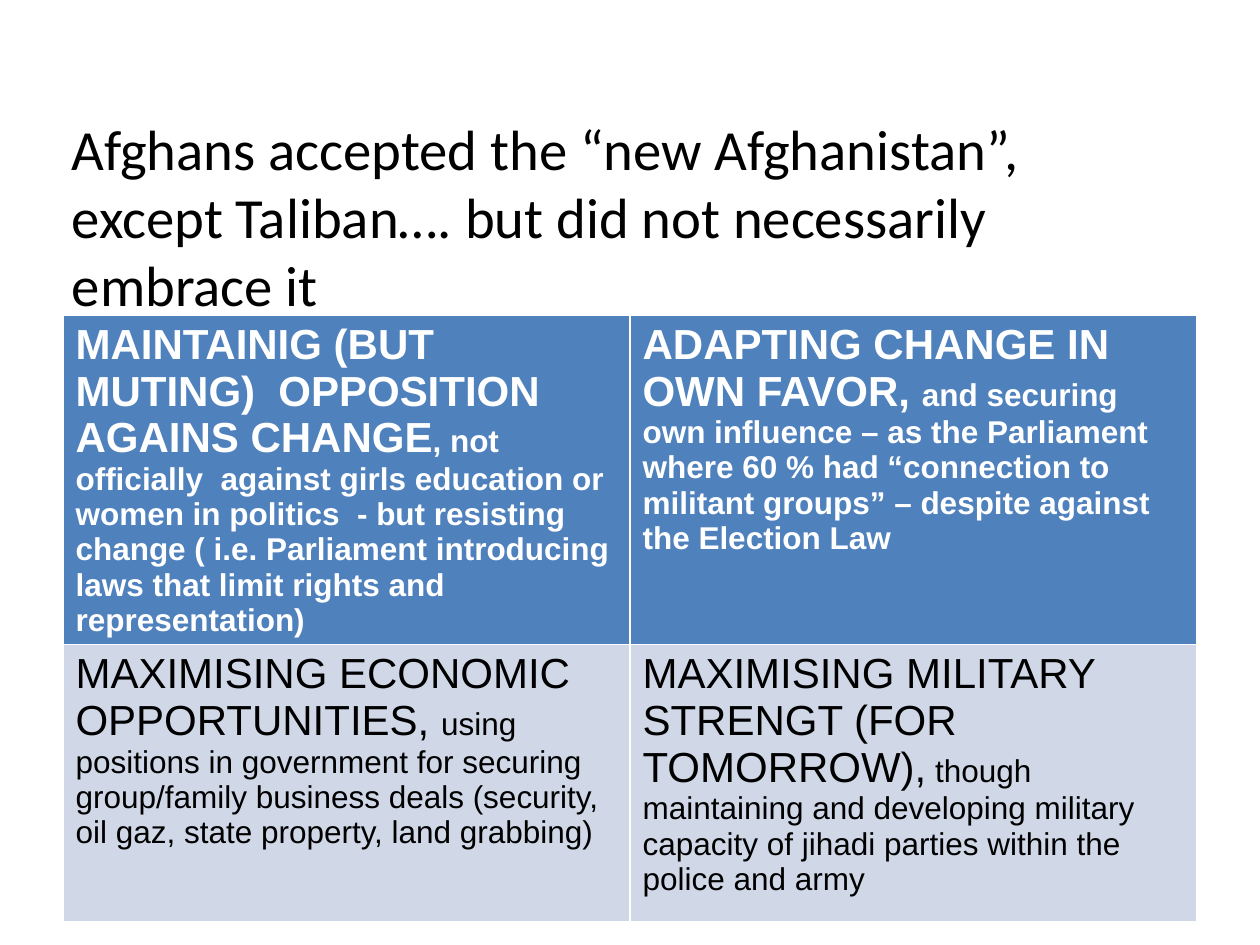
from typing import NamedTuple

from pptx import Presentation
from pptx.dml.color import RGBColor
from pptx.enum.text import MSO_ANCHOR, MSO_AUTO_SIZE, PP_ALIGN
from pptx.util import Inches, Pt

LEFT = PP_ALIGN.LEFT
MIDDLE = MSO_ANCHOR.MIDDLE
NO_FIT = MSO_AUTO_SIZE.NONE
BLACK = RGBColor(0x00, 0x00, 0x00)
WHITE = RGBColor(0xFF, 0xFF, 0xFF)
BLUE = RGBColor(0x4F, 0x81, 0xBD)
PALE_BLUE = RGBColor(0xD0, 0xD8, 0xE8)


class Strategy(NamedTuple):
    heading: str
    detail: str


class RowStyle(NamedTuple):
    fill: RGBColor
    color: RGBColor
    bold: bool


TITLE = "Afghans accepted the “new Afghanistan”, except Taliban…. but did not necessarily embrace it"
STRATEGIES = [
    [
        Strategy(
            "MAINTAINIG (BUT MUTING)  OPPOSITION AGAINS CHANGE",
            ", not officially  against girls education or women in politics  - but resisting "
            "change ( i.e. Parliament introducing laws that limit rights and representation)",
        ),
        Strategy(
            "ADAPTING CHANGE IN OWN FAVOR, ",
            "and securing own influence – as the Parliament where 60 % had “connection to "
            "militant groups” – despite against the Election Law",
        ),
    ],
    [
        Strategy(
            "MAXIMISING ECONOMIC OPPORTUNITIES, ",
            "using positions in government for securing group/family business deals "
            "(security, oil gaz, state property, land grabbing)",
        ),
        Strategy(
            "MAXIMISING MILITARY STRENGT (FOR TOMORROW),",
            " though maintaining and developing military capacity of jihadi parties within "
            "the police and army",
        ),
    ],
]
ROW_STYLES = [RowStyle(BLUE, WHITE, True), RowStyle(PALE_BLUE, BLACK, False)]


def add_run(p, text: str, *, size: float, font: str = "Arial",
            color: RGBColor = BLACK, bold: bool = False) -> None:
    r = p.add_run()
    r.text = text
    r.font.name = font
    r.font.size = Pt(size)
    r.font.bold = bold
    r.font.color.rgb = color


def set_title(slide, text: str) -> None:
    sp = slide.shapes.title
    sp.left, sp.top, sp.width, sp.height = map(Inches, (0.47, 1.09, 9, 1.25))
    tf = sp.text_frame
    tf.word_wrap = True
    tf.auto_size = NO_FIT
    tf.vertical_anchor = MIDDLE
    p = tf.paragraphs[0]
    p.alignment = LEFT
    add_run(p, text, size=32.4, font="Calibri")


def fill_cell(cell, strategy: Strategy, style: RowStyle) -> None:
    cell.fill.solid()
    cell.fill.fore_color.rgb = style.fill
    p = cell.text_frame.paragraphs[0]
    for text, size in zip(strategy, (24, 18)):
        add_run(p, text, size=size, color=style.color, bold=style.bold)


def add_strategy_table(slide) -> None:
    table = slide.shapes.add_table(
        len(STRATEGIES), len(STRATEGIES[0]),
        Inches(0.5), Inches(2.5), Inches(9), Inches(4.4),
    ).table
    for row, strategies, style in zip(table.rows, STRATEGIES, ROW_STYLES):
        for cell, strategy in zip(row.cells, strategies):
            fill_cell(cell, strategy, style)


def main() -> None:
    prs = Presentation()
    prs.slide_width, prs.slide_height = Inches(10), Inches(7.5)
    slide = prs.slides.add_slide(prs.slide_layouts[5])
    set_title(slide, TITLE)
    add_strategy_table(slide)
    prs.save("out.pptx")


if __name__ == "__main__":
    main()
